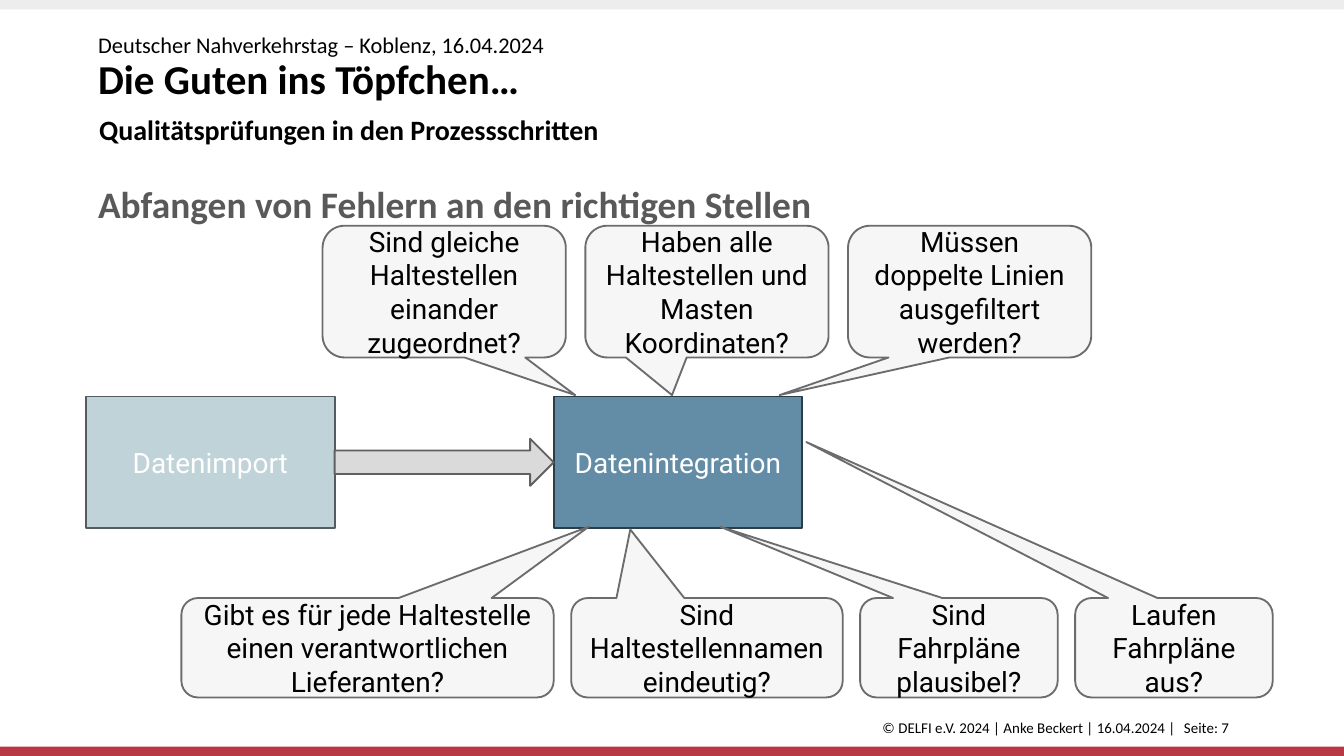
from pptx import Presentation
from pptx.dml.color import RGBColor
from pptx.enum.shapes import MSO_SHAPE
from pptx.enum.text import MSO_ANCHOR, PP_ALIGN
from pptx.util import Inches, Pt

COLORS = {
    "red": "B83844", "band": "EDEDED", "black": "000000", "white": "FFFFFF",
    "heading": "595959", "import": "BFD3D9", "import_line": "545C5F",
    "integration": "638CA6", "integration_line": "2B3D49",
    "arrow": "DADADA", "arrow_line": "606060",
    "callout": "F6F6F6", "callout_line": "6C6C6C",
}
SLIDE_WIDTH = 10
SLIDE_HEIGHT = SLIDE_WIDTH * 9 / 16
TOP_QUESTIONS = [
    ("Sind gleiche Haltestellen einander zugeordnet?", 4.28),
    ("Haben alle Haltestellen und Masten Koordinaten?", 5.0),
    ("Müssen doppelte Linien ausgefiltert werden?", 5.8),
]
BOTTOM_QUESTIONS = [
    ("Gibt es für jede Haltestelle einen verantwortlichen Lieferanten?", 2.77, (4.38, 3.92)),
    ("Sind Haltestellennamen eindeutig?", 2.02, (4.69, 3.94)),
    ("Sind Fahrpläne plausibel?", 1.47, (5.36, 3.92)),
    ("Laufen Fahrpläne aus?", 1.47, (6.0, 3.29)),
]


def color(name):
    """Return the named colour."""
    return RGBColor.from_string(COLORS[name])


def write(frame, text, size, font="Calibri", tint="black", bold=False,
          align=PP_ALIGN.LEFT, anchor=MSO_ANCHOR.MIDDLE, spacing=None):
    """Write one formatted paragraph into a text frame."""
    frame.word_wrap = True
    frame.vertical_anchor = anchor
    paragraph = frame.paragraphs[0]
    paragraph.alignment = align
    if spacing:
        paragraph.line_spacing = spacing
    run = paragraph.add_run()
    run.text = text
    run.font.name = font
    run.font.size = Pt(size)
    run.font.bold = bold
    run.font.color.rgb = color(tint)


def add_label(slide, box, text, size, insets=(0.09, 0.04, 0.09, 0.04), **style):
    """Add a text box with the given insets."""
    frame = slide.shapes.add_textbox(*map(Inches, box)).text_frame
    frame.margin_left, frame.margin_top, frame.margin_right, frame.margin_bottom = map(Inches, insets)
    write(frame, text, size, **style)


def add_figure(slide, preset, box, fill, line=None, text=None, tint="black"):
    """Add a filled preset shape with optional outline and centred text."""
    figure = slide.shapes.add_shape(preset, *map(Inches, box))
    figure.shadow.inherit = False
    figure.fill.solid()
    figure.fill.fore_color.rgb = color(fill)
    if line:
        figure.line.color.rgb = color(line)
        figure.line.width = Pt(1)
    else:
        figure.line.fill.background()
    if text:
        write(figure.text_frame, text, 15, "Roboto", tint, align=PP_ALIGN.CENTER)
    return figure


def add_callout(slide, box, text, tip):
    """Add a question bubble whose tail ends at the tip."""
    left, top, width, height = box
    callout = add_figure(slide, MSO_SHAPE.ROUNDED_RECTANGULAR_CALLOUT, box,
                         "callout", "callout_line", text)
    callout.adjustments[0] = (tip[0] - left) / width - 0.5
    callout.adjustments[1] = (tip[1] - top) / height - 0.5


def add_bands(slide, box):
    """Draw the bands along the top and bottom edges."""
    left, top, width, height = box
    band_height = 0.07
    add_figure(slide, MSO_SHAPE.RECTANGLE,
               (left, top + height - band_height, width, band_height), "red")
    add_figure(slide, MSO_SHAPE.RECTANGLE, (left, top, width, band_height), "band")


def add_header(slide, box):
    """Place the event, title, subtitle and section heading."""
    left, top, width, height = box
    add_label(slide, (left, top + 1, width, height - 1),
              "Abfangen von Fehlern an den richtigen Stellen", 20,
              tint="heading", bold=True, anchor=MSO_ANCHOR.TOP, spacing=1.3)
    add_label(slide, (left, top + 0.22, 6.57, 0.35), "Die Guten ins Töpfchen…", 22,
              bold=True, spacing=0.9)
    add_label(slide, (left, top, 7.29, 0.19),
              "Deutscher Nahverkehrstag – Koblenz, 16.04.2024", 12, spacing=1.3)
    add_label(slide, (left, top + 0.58, 5, 0.35),
              "Qualitätsprüfungen in den Prozessschritten", 15,
              insets=(0.1, 0.05, 0.1, 0.05), bold=True, anchor=MSO_ANCHOR.TOP)


def add_footer(slide, box):
    """Place the copyright line and the page number."""
    left, top, width, height = box
    page_width = 0.66
    add_label(slide, (left, top, width - page_width - 0.06, height),
              "© DELFI e.V. 2024 | Anke Beckert | 16.04.2024 |", 8,
              insets=(0.09, 0.04, 0, 0), align=PP_ALIGN.RIGHT, anchor=MSO_ANCHOR.BOTTOM)
    add_label(slide, (left + width - page_width, top, page_width, height), "Seite: 7", 8,
              insets=(0, 0.04, 0, 0), anchor=MSO_ANCHOR.BOTTOM)


def add_process(slide, box):
    """Draw the two process steps joined by a block arrow."""
    left, top, width, height = box
    step_width, arrow_height = 1.85, 0.35
    integration_left = left + width - step_width
    add_figure(slide, MSO_SHAPE.RECTANGLE, (left, top, step_width, height),
               "import", "import_line", "Datenimport", "white")
    add_figure(slide, MSO_SHAPE.RECTANGLE, (integration_left, top, step_width, height),
               "integration", "integration_line", "Datenintegration", "white")
    add_figure(slide, MSO_SHAPE.RIGHT_ARROW,
               (left + step_width, top + (height - arrow_height) / 2,
                width - 2 * step_width, arrow_height), "arrow", "arrow_line")


def add_top_questions(slide, box):
    """Spread equal question bubbles above the integration step."""
    left, top, width, height = box
    bubble_width = 1.81
    pitch = (width - bubble_width) / (len(TOP_QUESTIONS) - 1)
    for index, (question, tip_x) in enumerate(TOP_QUESTIONS):
        add_callout(slide, (left + index * pitch, top, bubble_width, height),
                    question, (tip_x, top + height + 0.28))


def add_bottom_questions(slide, box):
    """Line up question bubbles of varied width with equal gaps."""
    left, top, width, height = box
    taken = sum(bubble_width for _, bubble_width, _ in BOTTOM_QUESTIONS)
    gap = (width - taken) / (len(BOTTOM_QUESTIONS) - 1)
    for question, bubble_width, tip in BOTTOM_QUESTIONS:
        add_callout(slide, (left, top, bubble_width, height), question, tip)
        left += bubble_width + gap


def main():
    """Build and save the slide."""
    presentation = Presentation()
    presentation.slide_width = Inches(SLIDE_WIDTH)
    presentation.slide_height = Inches(SLIDE_HEIGHT)
    slide = presentation.slides.add_slide(presentation.slide_layouts[6])
    add_bands(slide, (0, 0, SLIDE_WIDTH, SLIDE_HEIGHT))
    add_header(slide, (0.64, 0.21, 8.83, 4.87))
    add_footer(slide, (4.76, 5.27, 4.71, 0.21))
    add_process(slide, (0.64, 2.95, 5.33, 0.98))
    add_top_questions(slide, (2.4, 1.68, 5.72, 0.98))
    add_bottom_questions(slide, (1.35, 4.45, 8.12, 0.74))
    presentation.save("out.pptx")


if __name__ == "__main__":
    main()
